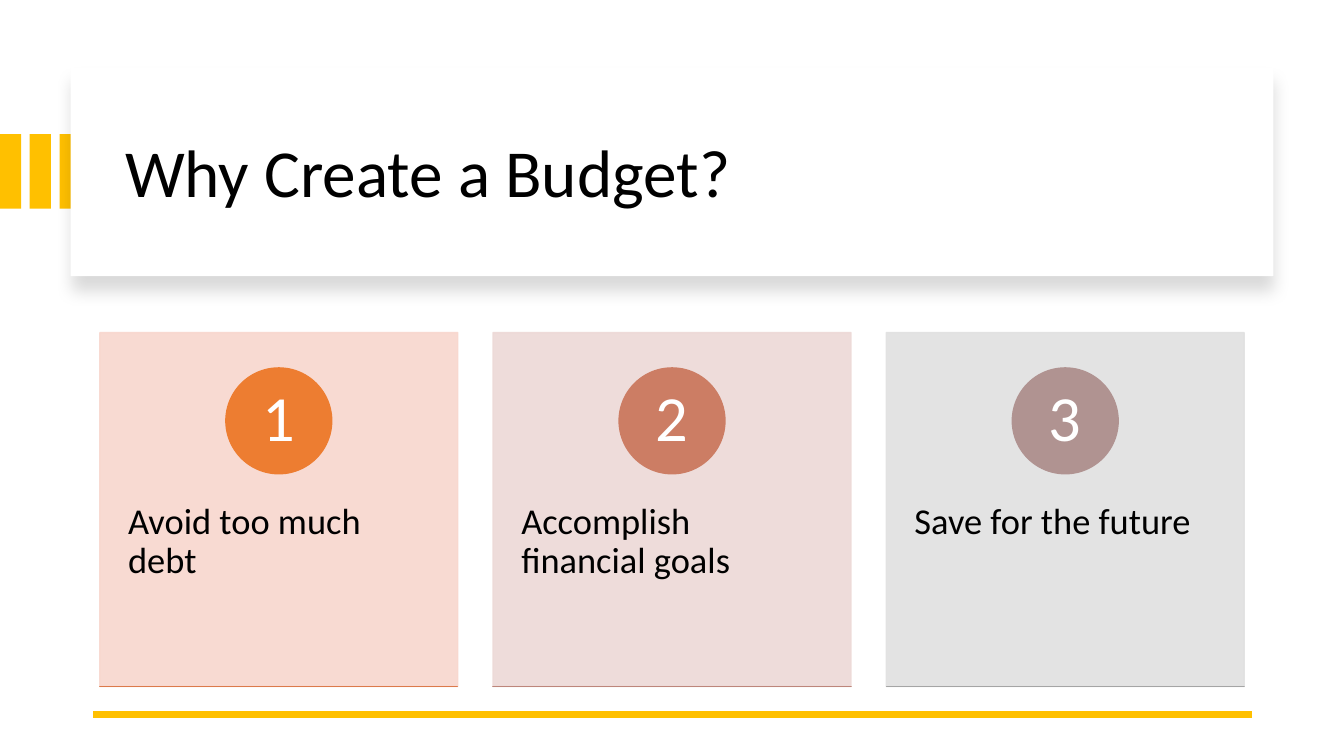
from lxml import etree
from pptx import Presentation
from pptx import util as u
from pptx.dml.color import RGBColor
from pptx.enum import shapes, text
from pptx.oxml.ns import qn

WIDTH, HEIGHT = 13.33, 7.5
FONT = "Calibri"
COLORS = {"gold": "FFC000", "white": "FFFFFF", "black": "000000"}

# Card grid: three equal columns
CARD_LEFT, CARD_TOP, CARD_PITCH = 0.99, 3.3, 3.9
CARD_WIDTH, CARD_HEIGHT = 3.55, 3.51
CIRCLE_SIZE, NUMBER_SIZE = 1.05, 0.74
CIRCLE_TOP, LABEL_TOP, LABEL_HEIGHT = 3.65, 4.63, 2.11

# Label, card colour, circle colour, baseline colour
REASONS = [
    ("Avoid too much debt", "F8D7CE", "ED7D31", "DC7A4B"),
    ("Accomplish financial goals", "EDD9D7", "CC7D64", "BD867B"),
    ("Save for the future", "E1E1E1", "B09391", "A5A5A5"),
]


def inches(*lengths):
    return [u.Inches(length) for length in lengths]


def set_alpha(color_node, percent):
    etree.SubElement(color_node, qn("a:alpha"), val=str(percent * 1000))


def add_block(page, kind, area, color, outlined=False, opacity=100):
    block = page.shapes.add_shape(kind, *inches(*area))
    block.shadow.inherit = False
    block.fill.solid()
    block.fill.fore_color.rgb = RGBColor.from_string(color)
    if outlined:
        block.line.color.rgb = RGBColor.from_string(color)
        block.line.width = u.Pt(1)
    else:
        block.line.fill.background()
    if opacity < 100:
        for node in block._element.spPr.iter(qn("a:srgbClr")):
            set_alpha(node, opacity)
    return block


def add_shadow(block):
    effects = block._element.spPr.find(qn("a:effectLst"))
    shadow = etree.SubElement(
        effects, qn("a:outerShdw"), blurRad=str(u.Pt(11)), dist=str(u.Pt(10)),
        dir=str(90 * 60000), algn="t", rotWithShape="0")
    set_alpha(etree.SubElement(shadow, qn("a:srgbClr"), val=COLORS["black"]), 15)


def write(box, words, size, color, align, anchor, insets):
    frame = box.text_frame
    frame.text = words
    frame.word_wrap = True
    frame.auto_size = text.MSO_AUTO_SIZE.NONE
    frame.vertical_anchor = anchor
    side, end = inches(*insets)
    frame.margin_left = frame.margin_right = side
    frame.margin_top = frame.margin_bottom = end
    para = frame.paragraphs[0]
    para.alignment = align
    para.line_spacing = 0.9
    span = para.runs[0]
    span.font.name = FONT
    span.font.size = u.Pt(size)
    span.font.color.rgb = RGBColor.from_string(color)


def add_header(page):
    rect = shapes.MSO_SHAPE.RECTANGLE
    # Gold stripes running in from the left edge
    for index in range(3):
        add_block(page, rect, (index * 0.295, 1.33, 0.21, 0.74), COLORS["gold"])
    # Raised white panel with the title on top
    panel = add_block(page, rect, (0.7, 0.67, 11.93, 2.07), COLORS["white"])
    add_shadow(panel)
    title = page.shapes.title
    title.left, title.top, title.width, title.height = inches(1.14, 0.89, 11.13, 1.7)
    write(title, "Why Create a Budget?", 48, COLORS["black"],
          text.PP_ALIGN.LEFT, text.MSO_ANCHOR.MIDDLE, (0.1, 0.05))
    panel._element.addnext(title._element)


def add_footer_line(page):
    line = page.shapes.add_connector(
        shapes.MSO_CONNECTOR.STRAIGHT, *inches(12.42, 7.09, 0.92, 7.09))
    line.line.color.rgb = RGBColor.from_string(COLORS["gold"])
    line.line.width = u.Pt(4.5)
    etree.SubElement(line._element.spPr, qn("a:effectLst"))


def add_card(page, index, label, card_color, circle_color, base_color):
    left = CARD_LEFT + index * CARD_PITCH
    center = left + CARD_WIDTH / 2
    rect = shapes.MSO_SHAPE.RECTANGLE
    add_block(page, rect, (left, CARD_TOP, CARD_WIDTH, CARD_HEIGHT),
              card_color, outlined=True, opacity=90)

    # Label
    box = page.shapes.add_textbox(*inches(left, LABEL_TOP, CARD_WIDTH, LABEL_HEIGHT))
    write(box, label, 26, COLORS["black"], text.PP_ALIGN.LEFT,
          text.MSO_ANCHOR.TOP, (0.28, 0.36))

    # Numbered circle
    add_block(page, shapes.MSO_SHAPE.OVAL,
              (center - CIRCLE_SIZE / 2, CIRCLE_TOP, CIRCLE_SIZE, CIRCLE_SIZE),
              circle_color, outlined=True)
    number_top = CIRCLE_TOP + (CIRCLE_SIZE - NUMBER_SIZE) / 2
    box = page.shapes.add_textbox(*inches(
        center - NUMBER_SIZE / 2, number_top, NUMBER_SIZE, NUMBER_SIZE))
    write(box, str(index + 1), 46, COLORS["white"], text.PP_ALIGN.CENTER,
          text.MSO_ANCHOR.MIDDLE, (0.08, 0.01))

    # Baseline
    add_block(page, rect, (left, CARD_TOP + CARD_HEIGHT, CARD_WIDTH, 0),
              base_color, outlined=True)


def main():
    deck = Presentation()
    deck.slide_width, deck.slide_height = inches(WIDTH, HEIGHT)
    page = deck.slides.add_slide(deck.slide_layouts.get_by_name("Title Only"))
    add_header(page)
    add_footer_line(page)
    for index, reason in enumerate(REASONS):
        add_card(page, index, *reason)
    deck.save("out.pptx")


if __name__ == "__main__":
    main()
